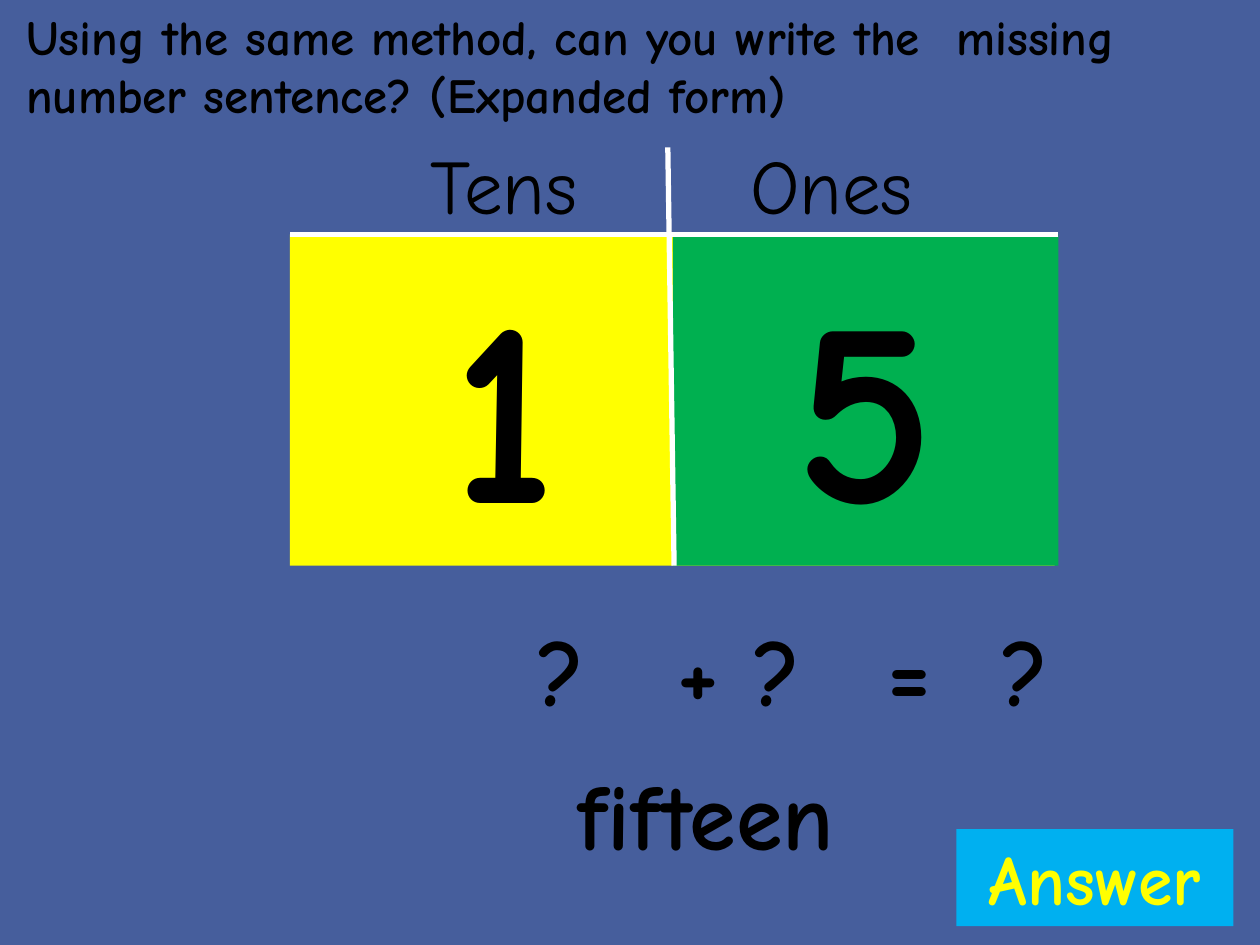
"""Build a place value slide that asks for the expanded form of fifteen."""
from lxml import etree
from pptx import Presentation
from pptx import util as u
from pptx.dml.color import RGBColor
from pptx.enum import shapes, text
from pptx.oxml.ns import qn

COLOURS = {
    "page": "465E9C",
    "ink": "000000",
    "white": "FFFFFF",
    "yellow": "FFFF00",
    "green": "00B050",
    "blue": "00B0F0",
}
FONT = "Comic Neue"
WIDE_GAP = " "
EXTRA_GAP = 0.39


def colour(name):
    return RGBColor.from_string(COLOURS[name])


def add_outline(span):
    line = etree.Element(qn("a:ln"), w=str(u.Pt(1.4)))
    fill = etree.SubElement(line, qn("a:solidFill"))
    etree.SubElement(fill, qn("a:srgbClr"), val=COLOURS["white"])
    span.font._element.insert(0, line)


def write(frame, *pieces, size, ink="ink", bold=True, align="CENTER",
          anchor="TOP", fit="NONE"):
    frame.word_wrap = True
    frame.auto_size = text.MSO_AUTO_SIZE[fit]
    frame.vertical_anchor = text.MSO_ANCHOR[anchor]
    para = frame.paragraphs[0]
    para.alignment = text.PP_ALIGN[align]
    for piece in pieces:
        span = para.add_run()
        span.text = piece
        span.font.name = FONT
        span.font.size = u.Pt(size)
        span.font.bold = bold
        span.font.color.rgb = colour(ink)
        if bold:
            add_outline(span)
        if piece == WIDE_GAP:
            span.font._element.set("spc", str(round(size * EXTRA_GAP * 100)))


class PlaceValueSlide:
    def __init__(self):
        self.deck = Presentation()
        self.deck.slide_width = u.Inches(10)
        self.deck.slide_height = u.Inches(7.5)
        self.page = self.deck.slides.add_slide(self.deck.slide_layouts[5])
        background = self.page.background.fill
        background.solid()
        background.fore_color.rgb = colour("page")

    def block(self, place, fill, words, right_inset=0.1, **style):
        box = self.page.shapes.add_shape(
            shapes.MSO_SHAPE.RECTANGLE, *map(u.Inches, place))
        box.shadow.inherit = False
        box.fill.solid()
        box.fill.fore_color.rgb = colour(fill)
        box.line.fill.background()
        box.text_frame.margin_right = u.Inches(right_inset)
        write(box.text_frame, words, **style)

    def label(self, place, *pieces, fit="SHAPE_TO_FIT_TEXT", **style):
        box = self.page.shapes.add_textbox(*map(u.Inches, place))
        write(box.text_frame, *pieces, fit=fit, **style)

    def title(self, place, words, **style):
        box = self.page.shapes.title
        box.left, box.top, box.width, box.height = map(u.Inches, place)
        write(box.text_frame, words, **style)

    def rule(self, *ends):
        line = self.page.shapes.add_connector(
            shapes.MSO_CONNECTOR.STRAIGHT, *map(u.Inches, ends))
        line.line.color.rgb = colour("white")
        line.line.width = u.Pt(3)
        etree.SubElement(line._element.spPr, qn("a:effectLst"))


def main():
    slide = PlaceValueSlide()

    chart_left, chart_top, chart_right, chart_height = 2.3, 1.86, 8.4, 2.63
    chart_bottom = chart_top + chart_height
    digits = [
        ("1", "yellow", chart_left, 6.07, 2.76),
        ("5", "green", 5.34, 3.06, 0.1),
    ]
    for digit, fill, left, width, right_inset in digits:
        slide.block((left, chart_top, width, chart_height), fill, digit,
                    right_inset=right_inset, size=150)

    slide.label((3.24, 5.95, 4.72, 1.01), "fifteen", size=54)
    slide.rule(5.3, 1.17, 5.35, chart_bottom)

    headings = [(slide.title, 3.01, "Tens"), (slide.label, 5.61, "Ones")]
    for add_heading, left, words in headings:
        add_heading((left, 0.83, 1.98, 1.25), words, size=44, bold=False,
                    anchor="MIDDLE", fit="NONE")
    slide.rule(chart_right, chart_top, chart_left, chart_top)

    slide.label((0.11, 0, 9.38, 1.04),
                "Using the same method, can you write the", WIDE_GAP,
                "missing number sentence? (Expanded form)",
                size=28, align="LEFT")

    number_sentence = [
        (3.63, 1.65, ["?"]),
        (5.04, 1.65, ["+ ?"]),
        (6.46, 2.45, ["=", WIDE_GAP, "?"]),
    ]
    for left, width, pieces in number_sentence:
        slide.label((left, 4.81, width, 1.01), *pieces, size=54)

    slide.block((7.59, 6.58, 2.2, 0.77), "blue", "Answer", size=40,
                ink="yellow")
    slide.deck.save("out.pptx")


if __name__ == "__main__":
    main()
